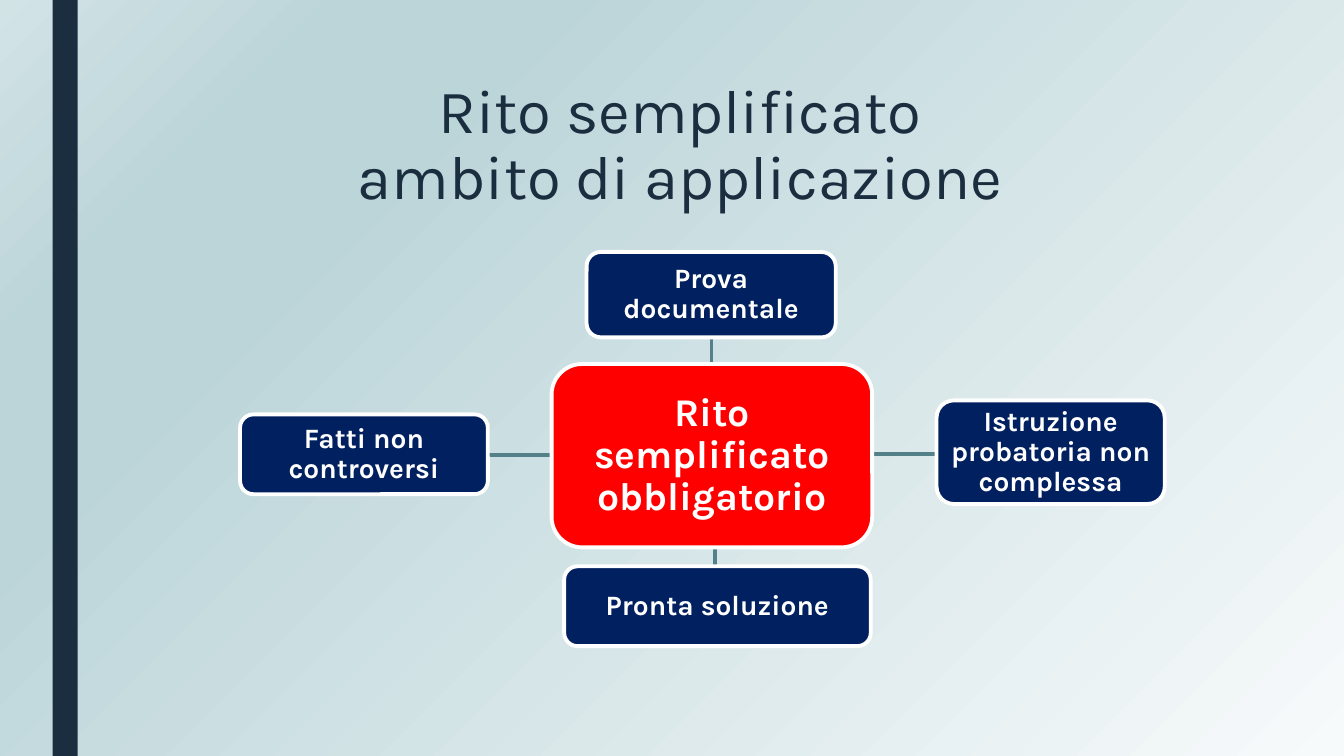
"""Build the slide on the scope of the simplified procedure."""
from lxml import etree
from pptx import Presentation
from pptx.dml.color import RGBColor
from pptx.enum import shapes, text
from pptx.oxml import ns, parse_xml
from pptx.util import Pt

NAVY = RGBColor(0x00, 0x20, 0x60)
INK = RGBColor(0x1A, 0x2E, 0x40)
RED = RGBColor(0xFF, 0x00, 0x00)
TEAL = RGBColor(0x54, 0x81, 0x89)
WHITE = RGBColor(0xFF, 0xFF, 0xFF)
FONT = "Karla"
TITLE = "Rito semplificato\vambito di applicazione"
HUB = ("Rito semplificato obbligatorio", (394, 260, 229, 131))
NODES = [
    ("Prova documentale", (419, 180, 178, 61), "top"),
    ("Istruzione probatoria non complessa", (669, 286, 163, 74), "right"),
    ("Pronta soluzione", (403, 404.5, 219, 57), "bottom"),
    ("Fatti non controversi", (171.5, 296, 177, 57), "left"),
]
STOPS = [(0, "F7FAFB"), (74, "BCD5D9"), (83, "BCD5D9"), (100, "D2E3E6")]


def style(par, size, color, bold, space):
    par.alignment = text.PP_ALIGN.CENTER
    par.line_spacing = space
    for run in par.runs:
        font = run.font
        font.name, font.size, font.bold = FONT, Pt(size), bold
        font.color.rgb = color


def block(slide, kind, box, fill):
    shape = slide.shapes.add_shape(kind, *map(Pt, box))
    shape.shadow.inherit = False
    shape.fill.solid()
    shape.fill.fore_color.rgb = fill
    shape.line.fill.background()
    return shape


def node(slide, label, box, fill, size, inset):
    shape = block(slide, shapes.MSO_SHAPE.ROUNDED_RECTANGLE, box, fill)
    shape.line.color.rgb = WHITE
    shape.line.width = Pt(2.75)
    frame = shape.text_frame
    frame.word_wrap = True
    frame.vertical_anchor = text.MSO_ANCHOR.MIDDLE
    frame.margin_left = frame.margin_right = Pt(inset)
    frame.margin_top = frame.margin_bottom = Pt(inset)
    frame.text = label
    style(frame.paragraphs[0], size, WHITE, True, 0.9)


def link(slide, box, side):
    x, y, w, h = HUB[1]
    left, top, wide, high = box
    mx = (x + w / 2 + left + wide / 2) / 2
    my = (y + h / 2 + top + high / 2) / 2
    ends = {
        "top": (mx, y, mx, top + high),
        "bottom": (mx, y + h, mx, top),
        "left": (x, my, left + wide, my),
        "right": (x + w, my, left, my),
    }[side]
    line = slide.shapes.add_connector(shapes.MSO_CONNECTOR.STRAIGHT, *map(Pt, ends))
    line.line.color.rgb = TEAL
    line.line.width = Pt(2.75)
    etree.SubElement(line._element.spPr, ns.qn("a:effectLst"))


def paint(slide):
    fill = slide.background.fill
    fill.gradient()
    grad = slide._element.find(".//" + ns.qn("a:gradFill"))
    stops = "".join(
        f'<a:gs pos="{pos * 1000}"><a:srgbClr val="{color}"/></a:gs>'
        for pos, color in STOPS
    )
    new = parse_xml(
        f'<a:gradFill {ns.nsdecls("a")} rotWithShape="1"><a:gsLst>{stops}</a:gsLst>'
        '<a:path path="circle"><a:fillToRect l="100000" t="100000"/></a:path>'
        '<a:tileRect r="-100000" b="-100000"/></a:gradFill>'
    )
    grad.getparent().replace(grad, new)


def main():
    deck = Presentation()
    deck.slide_width, deck.slide_height = Pt(960), Pt(540)
    slide = deck.slides.add_slide(deck.slide_layouts[5])
    paint(slide)
    block(slide, shapes.MSO_SHAPE.RECTANGLE, (37.5, 0, 18, 540), INK)
    title = slide.shapes.title
    title.left, title.top, title.width, title.height = map(Pt, (108, 54, 756, 117))
    frame = title.text_frame
    frame.text = TITLE
    frame.word_wrap = True
    frame.vertical_anchor = text.MSO_ANCHOR.TOP
    style(frame.paragraphs[0], 44, INK, False, 0.89)
    for label, box, side in NODES:
        link(slide, box, side)
        node(slide, label, box, NAVY, 20, 3)
    node(slide, *HUB, RED, 28, 6)
    deck.save("out.pptx")


if __name__ == "__main__":
    main()
